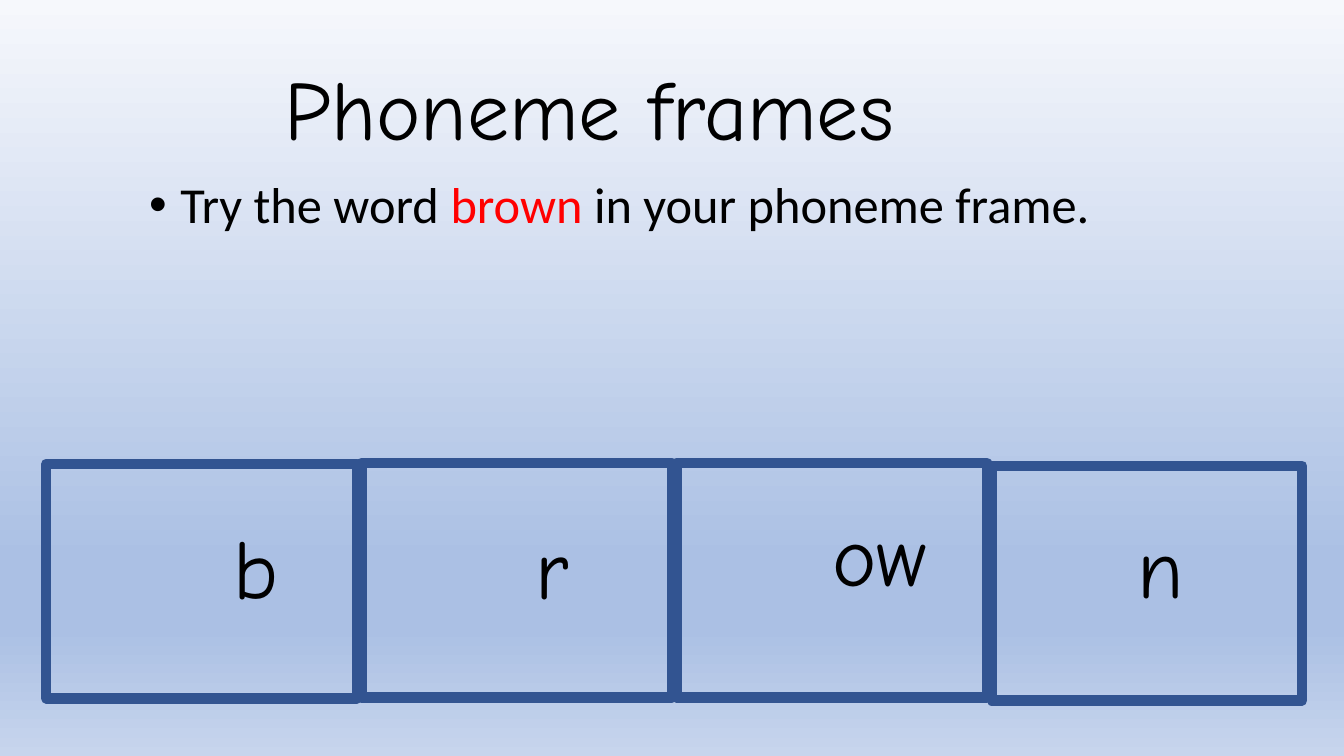
from lxml import etree
from pptx import Presentation
from pptx import util as u
from pptx.dml.color import RGBColor
from pptx.enum import shapes, text
from pptx.oxml import ns

COLOURS = {"ink": "000000", "highlight": "FF0000", "frame": "325491"}
SKY = [(0, "F6F8FC"), (74, "ABC0E4"), (83, "ABC0E4"), (100, "C7D5ED")]

FRAME_LEFT, FRAME_STEP = 0.46, 3.125
# phoneme, frame top, letter left, letter top
PHONEMES = [
    ("b", 4.6, 1.62, 5.06),
    ("r", 4.59, 4.56, 5.06),
    ("ow", 4.59, 7.81, 4.94),
    ("n", 4.62, 10.6, 5.05),
]


def colour(name):
    return RGBColor.from_string(COLOURS[name])


def paint_background(slide):
    fill = slide.background.fill
    fill.gradient()
    fill.gradient_angle = 270  # counter-clockwise: runs from top to bottom
    stops = fill.gradient_stops[0]._gs.getparent()
    for stop in list(stops):
        stops.remove(stop)
    for position, shade in SKY:
        stop = etree.SubElement(stops, ns.qn("a:gs"), pos=str(position * 1000))
        etree.SubElement(stop, ns.qn("a:srgbClr"), val=shade)


def add_text(slide, box, runs, size, font, align=text.PP_ALIGN.LEFT, bullet=False):
    label = slide.shapes.add_textbox(*map(u.Inches, box))
    label.text_frame.word_wrap = True
    line = label.text_frame.paragraphs[0]
    line.alignment = align
    if bullet:
        props = line._p.get_or_add_pPr()
        indent = u.Inches(0.31)
        props.set("marL", str(indent))
        props.set("indent", str(-indent))
        etree.SubElement(props, ns.qn("a:buFont"), typeface="Arial")
        etree.SubElement(props, ns.qn("a:buChar"), char="•")
    line.font.size = u.Pt(size)
    line.font.name = font
    for wording, tint in runs:
        run = line.add_run()
        run.text = wording
        run.font.color.rgb = colour(tint)


def add_frame(slide, left, top):
    frame = slide.shapes.add_shape(
        shapes.MSO_SHAPE.RECTANGLE, *map(u.Inches, (left, top, 3.08, 2.33)))
    frame.shadow.inherit = False
    frame.fill.background()
    frame.line.color.rgb = colour("frame")
    frame.line.width = u.Pt(7.25)


def main():
    deck = Presentation()
    deck.slide_width, deck.slide_height = u.Inches(13.33), u.Inches(7.5)
    slide = deck.slides.add_slide(deck.slide_layouts[6])
    paint_background(slide)

    # Title and instruction
    add_text(slide, (2.72, 0.51, 8.94, 2.12), [("Phoneme frames", "ink")],
             60, "Comic Neue")
    instruction = [("Try the word ", "ink"), ("brown", "highlight"),
                   (" in your phoneme frame.", "ink")]
    add_text(slide, (1.38, 1.67, 10.83, 1.31), instruction, 36, "Calibri", bullet=True)

    # One frame per phoneme
    for column, (phoneme, top, letter_left, letter_top) in enumerate(PHONEMES):
        add_frame(slide, FRAME_LEFT + column * FRAME_STEP, top)
        add_text(slide, (letter_left, letter_top, 1.83, 1.11), [(phoneme, "ink")],
                 60, "Comic Neue", text.PP_ALIGN.CENTER)

    deck.save("out.pptx")


if __name__ == "__main__":
    main()
